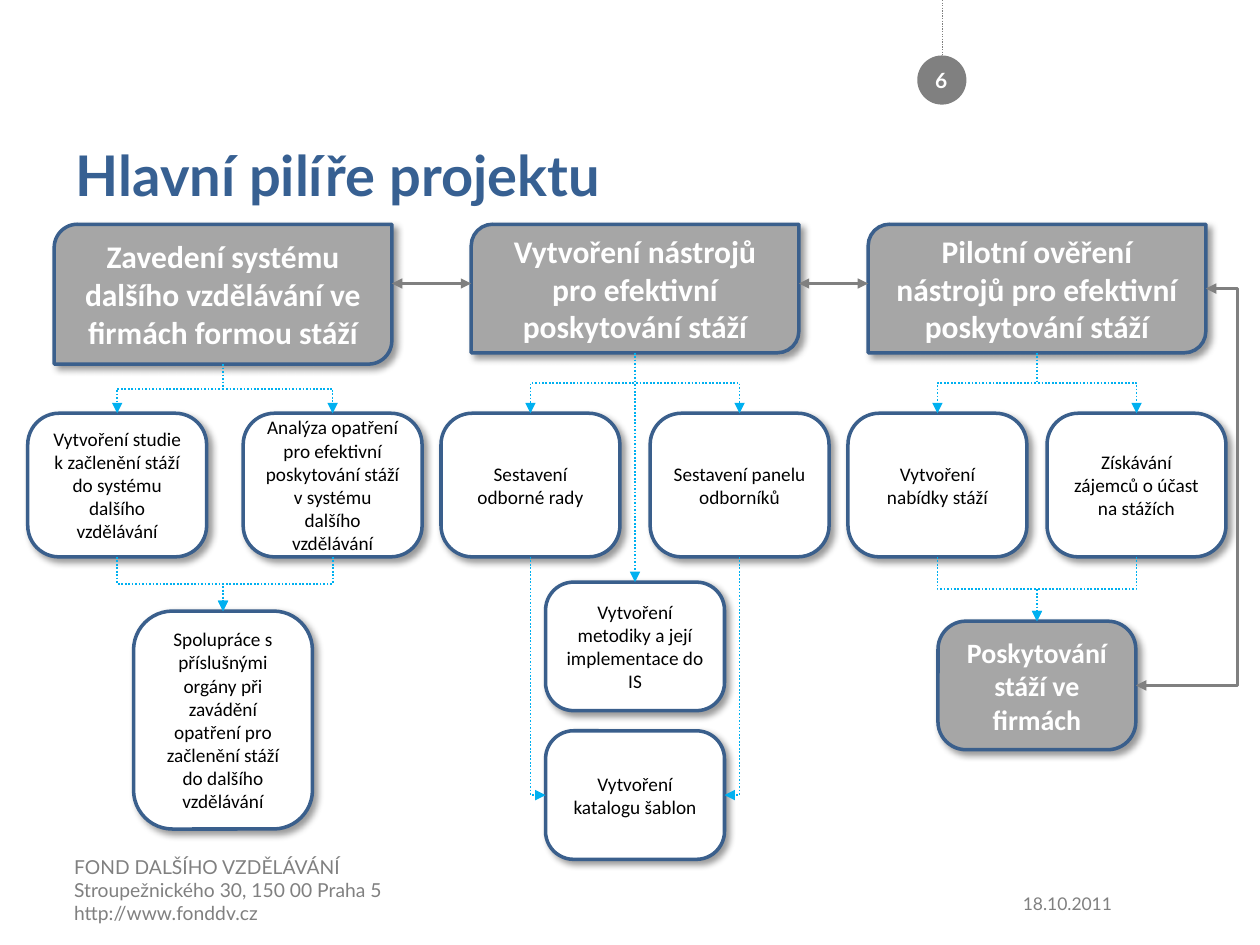
from lxml import etree
from pptx import Presentation
from pptx.dml.color import RGBColor
from pptx.enum.dml import MSO_LINE
from pptx.enum.shapes import MSO_CONNECTOR, MSO_SHAPE
from pptx.enum.text import MSO_ANCHOR, PP_ALIGN
from pptx.oxml.ns import qn
from pptx.util import Inches, Pt

STRAIGHT, ELBOW = MSO_CONNECTOR.STRAIGHT, MSO_CONNECTOR.ELBOW
ROUNDED, DIAGONAL, OVAL = MSO_SHAPE.ROUNDED_RECTANGLE, MSO_SHAPE.ROUND_2_DIAG_RECTANGLE, MSO_SHAPE.OVAL
TOP, MIDDLE, BOTTOM = MSO_ANCHOR.TOP, MSO_ANCHOR.MIDDLE, MSO_ANCHOR.BOTTOM
LEFT, CENTER = PP_ALIGN.LEFT, PP_ALIGN.CENTER
DOTTED = MSO_LINE.ROUND_DOT

GRAY, SILVER, WHITE, BLACK = "808080", "A6A6A6", "FFFFFF", "000000"
TITLE_BLUE, BORDER_BLUE, FLOW_BLUE = "376092", "3A5F8C", "00B0F0"
PILLAR_ROW, TASK_ROW = 1.78, 3.28
PILLAR_HEIGHT, TASK_HEIGHT, TASK_WIDTH = 1.02, 1.14, 1.42
EXCHANGE_ROW = 2.25

PILLARS = [
    (1.77, 2.68, 1.11, "Zavedení systému dalšího vzdělávání ve firmách formou stáží",
     [(0.93, "Vytvoření studie k začlenění stáží do systému dalšího vzdělávání"),
      (2.64, "Analýza opatření pro efektivní poskytování stáží v systému dalšího vzdělávání")]),
    (5.04, 2.6, PILLAR_HEIGHT, "Vytvoření nástrojů pro efektivní poskytování stáží",
     [(4.21, "Sestavení odborné rady"), (5.87, "Sestavení panelu odborníků")]),
    (8.23, 2.68, PILLAR_HEIGHT, "Pilotní ověření nástrojů pro efektivní poskytování stáží",
     [(7.44, "Vytvoření nabídky stáží"), (9.02, "Získávání zájemců o účast na stážích")]),
]


def color(value):
    return RGBColor.from_string(value)


def add_element(parent, tag, **attributes):
    return etree.SubElement(parent, qn(tag), attributes)


def write(holder, text, size, ink, font="Lato", bold=False, align=LEFT, anchor=MIDDLE):
    frame = holder.text_frame
    frame.text = text
    frame.word_wrap = True
    frame.vertical_anchor = anchor
    for paragraph in frame.paragraphs:
        paragraph.alignment = align
        for run in paragraph.runs:
            run.font.size = Pt(size)
            run.font.name = font
            run.font.bold = bold
            run.font.color.rgb = color(ink)


def label(slide, box, text, size, ink, **style):
    write(slide.shapes.add_textbox(*map(Inches, box)), text, size, ink, **style)


def card(slide, center, top, width, height, text, size=11, kind=ROUNDED, strong=False):
    box = slide.shapes.add_shape(kind, *map(Inches, (center - width / 2, top, width, height)))
    if kind == ROUNDED:
        box.adjustments[0] = 0.218
    box.fill.solid()
    box.fill.fore_color.rgb = color(SILVER if strong else WHITE)
    box.line.color.rgb = color(BORDER_BLUE)
    box.line.width = Pt(2)
    box.shadow.inherit = False
    effects = box._element.spPr.find(qn("a:effectLst"))
    shadow = add_element(effects, "a:outerShdw", blurRad=str(Pt(4)), dist=str(Pt(3)),
                         dir="2700000", algn="tl", rotWithShape="0")
    add_element(add_element(shadow, "a:srgbClr", val=BLACK), "a:alpha", val="40000")
    write(box, text, size, WHITE if strong else BLACK, "Calibri", strong, CENTER)
    return box


def top_of(box):
    return box.left + box.width // 2, box.top


def bottom_of(box):
    return box.left + box.width // 2, box.top + box.height


def left_of(box):
    return box.left, box.top + box.height // 2


def right_of(box):
    return box.left + box.width, box.top + box.height // 2


def connect(slide, start, end, ink, width, dash=None, ends=(), kind=STRAIGHT):
    link = slide.shapes.add_connector(kind, *start, *end)
    link.line.color.rgb = color(ink)
    link.line.width = Pt(width)
    if dash:
        link.line.dash_style = dash
    outline = link.line._get_or_add_ln()
    for tag in ends:
        add_element(outline, tag, type="triangle")
    add_element(link._element.spPr, "a:effectLst")
    return link


def flow(slide, start, end, preset="bentConnector3"):
    (x1, y1), (x2, y2) = start, end
    length, spread = y2 - y1, abs(x2 - x1)
    left, top = (x1 + x2 - length) // 2, (y1 + y2 - spread) // 2
    link = connect(slide, (left, top), (left + length, top + spread), FLOW_BLUE, 1,
                   DOTTED, ("a:tailEnd",), ELBOW)
    properties = link._element.spPr
    properties.find(qn("a:prstGeom")).set("prst", preset)
    frame = properties.find(qn("a:xfrm"))
    if x2 < x1:
        frame.set("rot", "5400000")
    else:
        frame.set("rot", "16200000")
        frame.set("flipH", "1")


def exchange(slide, start, end, width=1.5, kind=STRAIGHT):
    return connect(slide, start, end, GRAY, width, None, ("a:headEnd", "a:tailEnd"), kind)


def page_marker(slide):
    connect(slide, (Inches(7.48), 0), (Inches(7.48), Inches(0.47)), GRAY, 0.75, DOTTED)
    disc = slide.shapes.add_shape(OVAL, *map(Inches, (7.28, 0.44, 0.39, 0.39)))
    disc.fill.solid()
    disc.fill.fore_color.rgb = color(GRAY)
    disc.line.fill.background()
    disc.shadow.inherit = False
    label(slide, (7.26, 0.44, 0.42, 0.4), "6", 12, WHITE, bold=True, align=CENTER)


def heading(slide):
    title = slide.shapes.title
    title.left, title.top, title.width, title.height = map(Inches, (0.5, 0.28, 6.63, 1.42))
    write(title, "Hlavní pilíře projektu", 32, TITLE_BLUE, bold=True, anchor=BOTTOM)


def pillar_group(slide, center, width, height, text, tasks):
    pillar = card(slide, center, PILLAR_ROW, width, height, text, 18, DIAGONAL, True)
    steps = [card(slide, x, TASK_ROW, TASK_WIDTH, TASK_HEIGHT, task) for x, task in tasks]
    for step in steps:
        flow(slide, bottom_of(pillar), top_of(step))
    return pillar, steps


def main():
    deck = Presentation()
    deck.slide_width, deck.slide_height = Inches(10), Inches(7.5)
    slide = deck.slides.add_slide(deck.slide_layouts[5])
    page_marker(slide)
    heading(slide)
    label(slide, (8.02, 6.97, 1.9, 0.4), "18.10.2011", 10, GRAY)
    label(slide, (0.49, 6.74, 3.17, 0.61),
          "FOND DALŠÍHO VZDĚLÁVÁNÍ\vStroupežnického 30, 150 00 Praha 5\vhttp://www.fonddv.cz",
          11, GRAY, anchor=TOP)

    groups = [pillar_group(slide, *pillar) for pillar in PILLARS]
    (system, studies), (tools, panels), (pilot, offers) = groups
    cooperation = card(slide, 1.77, 4.85, TASK_WIDTH, 1.73,
                       "Spolupráce s příslušnými orgány při zavádění opatření pro "
                       "začlenění stáží do dalšího vzdělávání")
    method = card(slide, 5.04, 4.62, TASK_WIDTH, PILLAR_HEIGHT,
                  "Vytvoření metodiky a její implementace do IS")
    catalog = card(slide, 5.04, 5.8, TASK_WIDTH, PILLAR_HEIGHT, "Vytvoření katalogu šablon")
    internships = card(slide, 8.23, 4.93, 1.57, PILLAR_HEIGHT,
                       "Poskytování stáží ve firmách", 16, strong=True)

    for steps, result in ((studies, cooperation), (offers, internships)):
        for step in steps:
            flow(slide, bottom_of(step), top_of(result))
    for step, side in zip(panels, (left_of, right_of)):
        flow(slide, bottom_of(step), side(catalog), "bentConnector2")
    connect(slide, bottom_of(tools), top_of(method), FLOW_BLUE, 1, DOTTED, ("a:tailEnd",))

    for before, after in ((system, tools), (tools, pilot)):
        exchange(slide, (after.left, Inches(EXCHANGE_ROW)),
                 (before.left + before.width, Inches(EXCHANGE_ROW)))
    feedback = exchange(slide, right_of(internships), right_of(pilot), 2, ELBOW)
    bends = feedback._element.spPr.find(qn("a:prstGeom")).find(qn("a:avLst"))
    add_element(bends, "a:gd", name="adj1", fmla="val 145400")
    deck.save("out.pptx")


if __name__ == "__main__":
    main()
